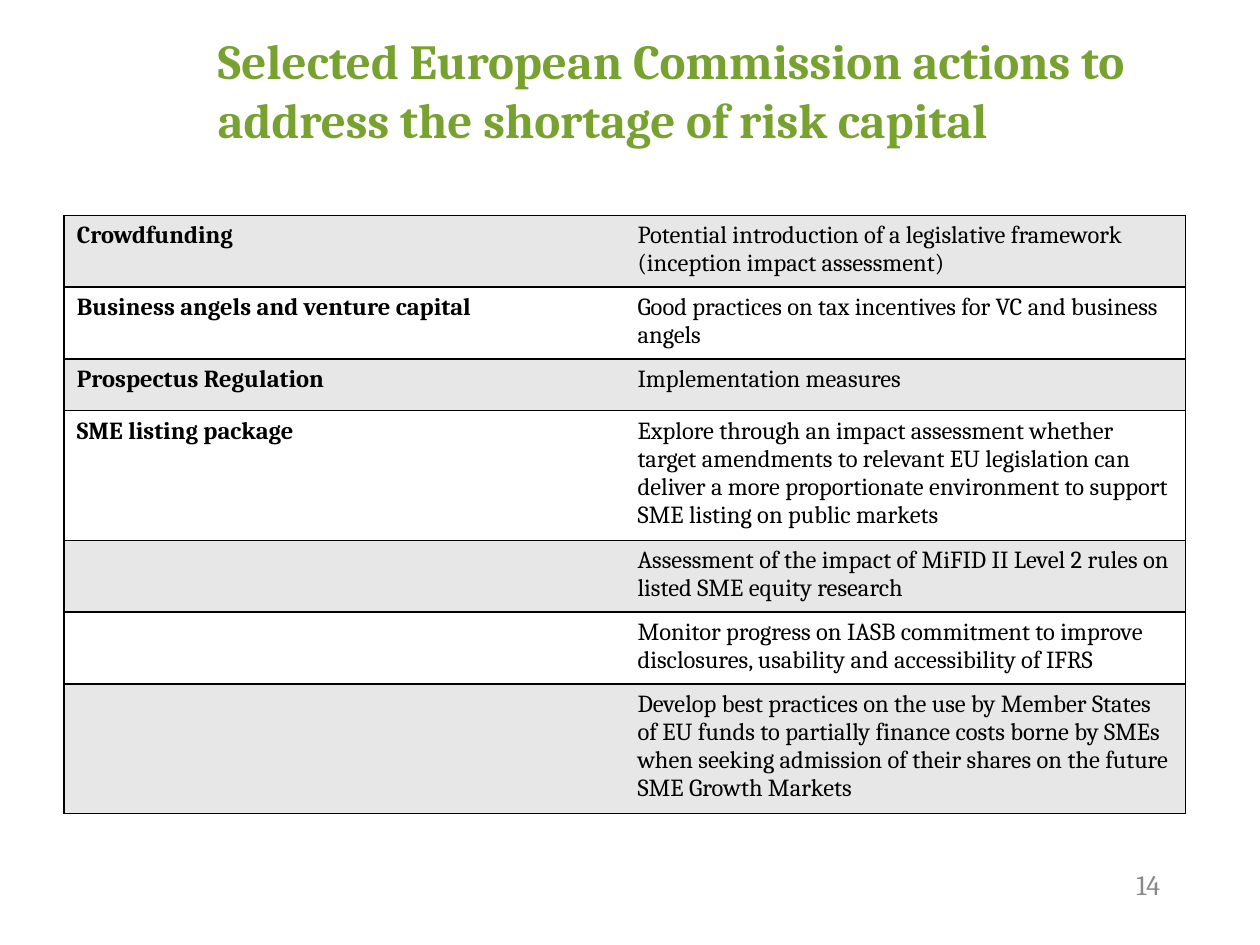
from lxml import etree
from pptx import Presentation
from pptx.dml.color import RGBColor
from pptx.enum.text import MSO_ANCHOR, MSO_AUTO_SIZE, PP_ALIGN
from pptx.oxml.ns import qn
from pptx.util import Inches, Pt

TOP, MIDDLE = MSO_ANCHOR.TOP, MSO_ANCHOR.MIDDLE
LEFT = PP_ALIGN.LEFT
NO_FIT = MSO_AUTO_SIZE.NONE
TITLE_ONLY = 5
WIDTH, HEIGHT = 10, 7.5
COLORS = {
    "green": "78A22F",
    "black": "000000",
    "grey": "898989",
    "band": "E7E7E7",
    "white": "FFFFFF",
}
ACTIONS = [
    ("Crowdfunding",
     "Potential introduction of a legislative framework (inception impact assessment)"),
    ("Business angels and venture capital",
     "Good practices on tax incentives for VC and business angels"),
    ("Prospectus Regulation", "Implementation measures"),
    ("SME listing package",
     "Explore through an impact assessment whether target amendments to relevant EU "
     "legislation can deliver a more proportionate environment to support SME listing "
     "on public markets"),
    ("", "Assessment of the impact of MiFID II Level 2 rules on listed SME equity research"),
    ("", "Monitor progress on IASB commitment to improve disclosures, usability and "
         "accessibility of IFRS"),
    ("", "Develop best practices on the use by Member States of EU funds to partially "
         "finance costs borne by SMEs when seeking admission of their shares on the "
         "future SME Growth Markets"),
]
SHORT, DOUBLE, TALL = 0.41, 0.57, 1.03
ROW_HEIGHTS = [DOUBLE, DOUBLE, SHORT, TALL, DOUBLE, DOUBLE, TALL]


class SlideBuilder:
    """Lengths are shares of the slide's width and height."""

    font = "Cambria"

    def __init__(self, deck):
        self.deck = deck
        self.page = deck.slides.add_slide(deck.slide_layouts[TITLE_ONLY])

    def area(self, left, top, width, height):
        across, down = self.deck.slide_width, self.deck.slide_height
        return [int(share * size) for share, size in
                zip((left, top, width, height), (across, down, across, down))]

    def set_text(self, frame, text, size, color, bold=False):
        frame.text = text
        para = frame.paragraphs[0]
        para.alignment = LEFT
        para.font.name = self.font
        para.font.size = Pt(size)
        para.font.bold = bold
        para.font.color.rgb = RGBColor.from_string(COLORS[color])

    def title(self, text, *place):
        box = self.page.shapes.title
        box.left, box.top, box.width, box.height = self.area(*place)
        frame = box.text_frame
        frame.auto_size = NO_FIT
        frame.word_wrap = True
        frame.vertical_anchor = TOP
        self.set_text(frame, text, 28, "green", bold=True)

    def page_number(self, text, *place):
        frame = self.page.shapes.add_textbox(*self.area(*place)).text_frame
        frame.word_wrap = False
        frame.vertical_anchor = MIDDLE
        self.set_text(frame, text, 16, "grey")

    def border(self, cell, side, color=None):
        """Draw a 1 pt line on a side (L, R, T or B), or none without a color."""
        properties = cell._tc.get_or_add_tcPr()
        line = etree.SubElement(properties, qn(f"a:ln{side}"), w=str(Pt(1)))
        if color is None:
            etree.SubElement(line, qn("a:noFill"))
        else:
            fill = etree.SubElement(line, qn("a:solidFill"))
            etree.SubElement(fill, qn("a:srgbClr"), val=COLORS[color])

    def table(self, rows, heights, *place):
        columns = len(rows[0])
        table = self.page.shapes.add_table(len(rows), columns, *self.area(*place)).table
        table.first_row = table.horz_banding = False
        for row, height in zip(table.rows, heights):
            row.height = Inches(height)
        for r, texts in enumerate(rows):
            for c, text in enumerate(texts):
                cell = table.cell(r, c)
                self.border(cell, "L", "black" if c == 0 else None)
                self.border(cell, "R", "black" if c == columns - 1 else None)
                self.border(cell, "T", "black")
                self.border(cell, "B", "black")
                cell.fill.solid()
                band = COLORS["white" if r % 2 else "band"]
                cell.fill.fore_color.rgb = RGBColor.from_string(band)
                self.set_text(cell.text_frame, text, 14, "black", bold=c == 0)


def main():
    deck = Presentation()
    deck.slide_width, deck.slide_height = Inches(WIDTH), Inches(HEIGHT)
    slide = SlideBuilder(deck)
    slide.title("Selected European Commission actions to address the shortage of risk capital",
                1.63 / WIDTH, 0.19 / HEIGHT, 8.26 / WIDTH, 0.56 / HEIGHT)
    slide.table(ACTIONS, ROW_HEIGHTS,
                0.51 / WIDTH, 1.71 / HEIGHT, 8.9 / WIDTH, sum(ROW_HEIGHTS) / HEIGHT)
    slide.page_number("14", 8.92 / WIDTH, 6.83 / HEIGHT, 0.48 / WIDTH, 0.37 / HEIGHT)
    deck.save("out.pptx")


if __name__ == "__main__":
    main()
